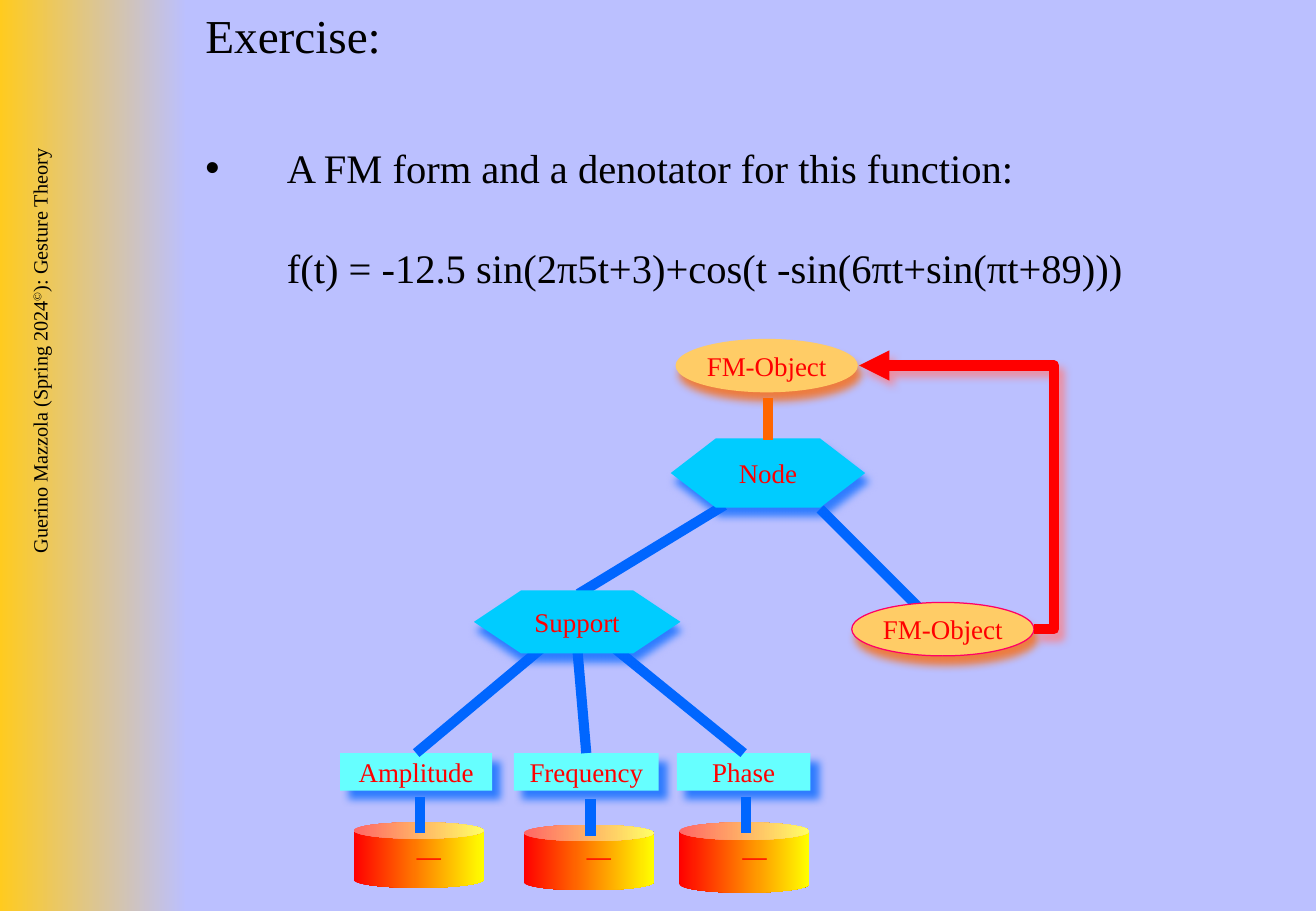
from dataclasses import dataclass

from lxml import etree
from pptx import Presentation
from pptx.dml.color import RGBColor
from pptx.enum.shapes import MSO_CONNECTOR, MSO_SHAPE
from pptx.enum.text import MSO_ANCHOR, MSO_AUTO_SIZE, PP_ALIGN
from pptx.oxml.ns import qn
from pptx.util import Inches, Pt

STRAIGHT, ELBOW = MSO_CONNECTOR.STRAIGHT, MSO_CONNECTOR.ELBOW
RECTANGLE, OVAL = MSO_SHAPE.RECTANGLE, MSO_SHAPE.OVAL
HEXAGON, CAN = MSO_SHAPE.HEXAGON, MSO_SHAPE.CAN
TOP, MIDDLE = MSO_ANCHOR.TOP, MSO_ANCHOR.MIDDLE
LEFT, CENTER, RIGHT = PP_ALIGN.LEFT, PP_ALIGN.CENTER, PP_ALIGN.RIGHT


@dataclass(frozen=True)
class Theme:
    font: str = "Times New Roman"
    dash_font: str = "Cambria"
    background: str = "BBC0FF"
    band: str = "FFCB1F"
    text: str = "000000"
    label: str = "FF0000"
    form: str = "FFCC66"
    form_outline: str = "FF0066"
    form_shadow: str = "FF6600"
    node: str = "00CCFF"
    component: str = "66FFFF"
    link: str = "0066FF"
    loop: str = "FF0000"
    loop_shadow: str = "FF7C80"
    can: tuple = ("FF0000", "FFFF00")
    title_size: int = 28
    body_size: int = 24
    label_size: int = 16
    side_size: int = 12


@dataclass(frozen=True)
class Box:
    left: float
    top: float
    width: float
    height: float

    def inner(self, left, top, width, height):
        """Return a box given by its offset from this one."""
        return Box(self.left + left, self.top + top, width, height)

    def lengths(self):
        return [Inches(v) for v in (self.left, self.top, self.width, self.height)]


THEME = Theme()


def rgb(color):
    return RGBColor.from_string(color)


def add_run(paragraph, text, size, color=THEME.text, font=THEME.font):
    run = paragraph.add_run()
    run.text = text
    run.font.name = font
    run.font.size = Pt(size)
    run.font.color.rgb = rgb(color)
    return run


def add_shadow(effects, color, distance, angle):
    shadow = etree.SubElement(effects, qn("a:outerShdw"), blurRad=str(Pt(5)),
                              dist=str(Pt(distance)), dir=str(angle * 60000),
                              algn="ctr", rotWithShape="0")
    shade = etree.SubElement(shadow, qn("a:srgbClr"), val=color)
    etree.SubElement(shade, qn("a:alpha"), val="75000")


def add_shape(slide, kind, box, fill, outline=None, shadow=None, text=None):
    """Add a preset shape; a pair of fill colours makes a left-to-right gradient."""
    shape = slide.shapes.add_shape(kind, *box.lengths())
    if isinstance(fill, tuple):
        shape.fill.gradient()
        shape.fill.gradient_angle = 0
        for stop, color in zip(shape.fill.gradient_stops, fill):
            stop.color.rgb = rgb(color)
    else:
        shape.fill.solid()
        shape.fill.fore_color.rgb = rgb(fill)
    if outline:
        shape.line.color.rgb = rgb(outline)
        shape.line.width = Pt(0.75)
    else:
        shape.line.fill.background()
    shape.shadow.inherit = False
    if shadow:
        add_shadow(shape.element.spPr.find(qn("a:effectLst")), *shadow)
    if text:
        frame = shape.text_frame
        frame.word_wrap = False
        frame.vertical_anchor = MIDDLE
        frame.paragraphs[0].alignment = CENTER
        add_run(frame.paragraphs[0], text, THEME.label_size, THEME.label)
    return shape


def add_line(slide, box, start, end, color=THEME.link, kind=STRAIGHT):
    points = [Inches(v) for x, y in (start, end) for v in (box.left + x, box.top + y)]
    connector = slide.shapes.add_connector(kind, *points)
    connector.line.color.rgb = rgb(color)
    connector.line.width = Pt(6)
    etree.SubElement(connector.element.spPr, qn("a:effectLst"))
    return connector


def add_text_box(slide, box):
    text_box = slide.shapes.add_textbox(*box.lengths())
    text_box.text_frame.word_wrap = True
    return text_box


def add_side_band(slide, box):
    add_shape(slide, RECTANGLE, box, (THEME.band, THEME.background))
    credit = add_text_box(slide, box.inner(-2.4, 3.7, 5.65, 0.5))
    credit.rotation = 270
    paragraph = credit.text_frame.paragraphs[0]
    paragraph.alignment = RIGHT
    add_run(paragraph, "Guerino Mazzola (Spring 2024", THEME.side_size)
    mark = add_run(paragraph, "©", THEME.side_size)
    mark.font._element.set("baseline", "30000")
    add_run(paragraph, "): Gesture Theory", THEME.side_size)


def place_placeholder(placeholder, box):
    placeholder.left, placeholder.top, placeholder.width, placeholder.height = box.lengths()
    frame = placeholder.text_frame
    frame.auto_size = MSO_AUTO_SIZE.NONE
    frame.vertical_anchor = TOP
    frame.paragraphs[0].alignment = LEFT
    return frame


def add_exercise(slide, box):
    title = place_placeholder(slide.shapes.title, box.inner(0, 0, box.width, 0.6))
    add_run(title.paragraphs[0], "Exercise:", THEME.title_size)

    body = place_placeholder(slide.placeholders[1], box.inner(0, 1.13, box.width, 1.33))
    task, formula = body.paragraphs[0], body.add_paragraph()
    indent = Inches(0.67)
    for paragraph, first_line in ((task, -indent), (formula, 0)):
        properties = paragraph._p.get_or_add_pPr()
        properties.set("marL", str(indent))
        properties.set("indent", str(first_line))
    etree.SubElement(task._p.pPr, qn("a:buChar"), char="•")
    etree.SubElement(formula._p.pPr, qn("a:buNone"))
    task.space_before = Pt(0)
    formula.space_before = Pt(30)
    add_run(task, "A FM form and a denotator for this function:", THEME.body_size)
    add_run(formula, "f(t) = -12.5 sin(2π5t+3)+cos(t -sin(6πt+sin(πt+89)))", THEME.body_size)


def add_loop(slide, box):
    """Add the arrow that leads from the lower form back to the upper one."""
    loop = add_line(slide, box, (6.01, 2.68), (4.57, 0.51), THEME.loop, ELBOW)
    properties = loop.element.spPr
    guides = properties.find(qn("a:prstGeom")).get_or_add_avLst()
    etree.SubElement(guides, qn("a:gd"), name="adj1", fmla="val -11500")
    etree.SubElement(properties.find(qn("a:ln")), qn("a:tailEnd"), type="triangle")
    add_shadow(properties.find(qn("a:effectLst")), THEME.loop_shadow, 5, 53)


def add_component(slide, box, name, can_left, can_top, can_height):
    """Add a label at the top of the box and its storage can below."""
    label = add_shape(slide, RECTANGLE, box.inner(0, 0, box.width, 0.31), THEME.component,
                      shadow=(THEME.link, 7.1, 45), text=name)
    add_shape(slide, CAN, box.inner(can_left, can_top, 1.07, can_height), THEME.can)
    stem = can_left + 0.55
    add_line(slide, box, (stem, can_top - 0.21), (stem, can_top + 0.09))
    dash = add_text_box(slide, box.inner(can_left + 0.41, 0.66, 0.33, 0.64))
    add_run(dash.text_frame.paragraphs[0], "—", THEME.label_size, THEME.label, THEME.dash_font)
    return label


def add_form_tree(slide, box):
    form_shadow = (THEME.form_shadow, 5.4, 67)
    add_line(slide, box, (4.25, 1.69), (5.06, 2.5))
    add_line(slide, box, (3.46, 1.66), (2.26, 2.39))
    node = add_shape(slide, HEXAGON, box.inner(3.02, 1.11, 1.6, 0.57), THEME.node,
                     shadow=(THEME.link, 5.4, 67), text="Node")
    node.adjustments[0] = 0.65
    add_shape(slide, OVAL, box.inner(4.51, 2.46, 1.5, 0.44), THEME.form,
              THEME.form_outline, form_shadow, "FM-Object")
    add_loop(slide, box)

    components = (
        ("Amplitude", 0.3, 1.25, (0.11, 0.57, 0.54), (1.99, 2.81)),
        ("Frequency", 1.73, 1.19, (0.08, 0.59, 0.54), (2.25, 2.83)),
        ("Phase", 3.07, 1.1, (0.02, 0.57, 0.58), (2.5, 2.79)),
    )
    for name, left, width, can, start in components:
        label = add_component(slide, box.inner(left, 3.7, width, 1.3), name, *can)
        link = add_line(slide, box, start, (left + width / 2, 3.7))
        link.end_connect(label, 0)

    support = add_shape(slide, HEXAGON, box.inner(1.4, 2.36, 1.7, 0.52), THEME.node,
                        shadow=(THEME.link, 5.1, 79), text="Support")
    support.adjustments[0] = 0.75
    add_shape(slide, OVAL, box.inner(3.06, 0.29, 1.5, 0.44), THEME.form,
              shadow=form_shadow, text="FM-Object")
    add_line(slide, box, (3.82, 0.78), (3.82, 1.12), THEME.form_shadow)


def main():
    presentation = Presentation()
    presentation.slide_width, presentation.slide_height = Inches(10.83), Inches(7.5)
    slide = presentation.slides.add_slide(presentation.slide_layouts[1])
    slide.background.fill.solid()
    slide.background.fill.fore_color.rgb = rgb(THEME.background)
    add_side_band(slide, Box(0, 0, 1.54, 7.5))
    add_exercise(slide, Box(1.59, 0, 9.24, 2.46))
    add_form_tree(slide, Box(2.5, 2.5, 6.3, 5))
    presentation.save("out.pptx")


if __name__ == "__main__":
    main()
